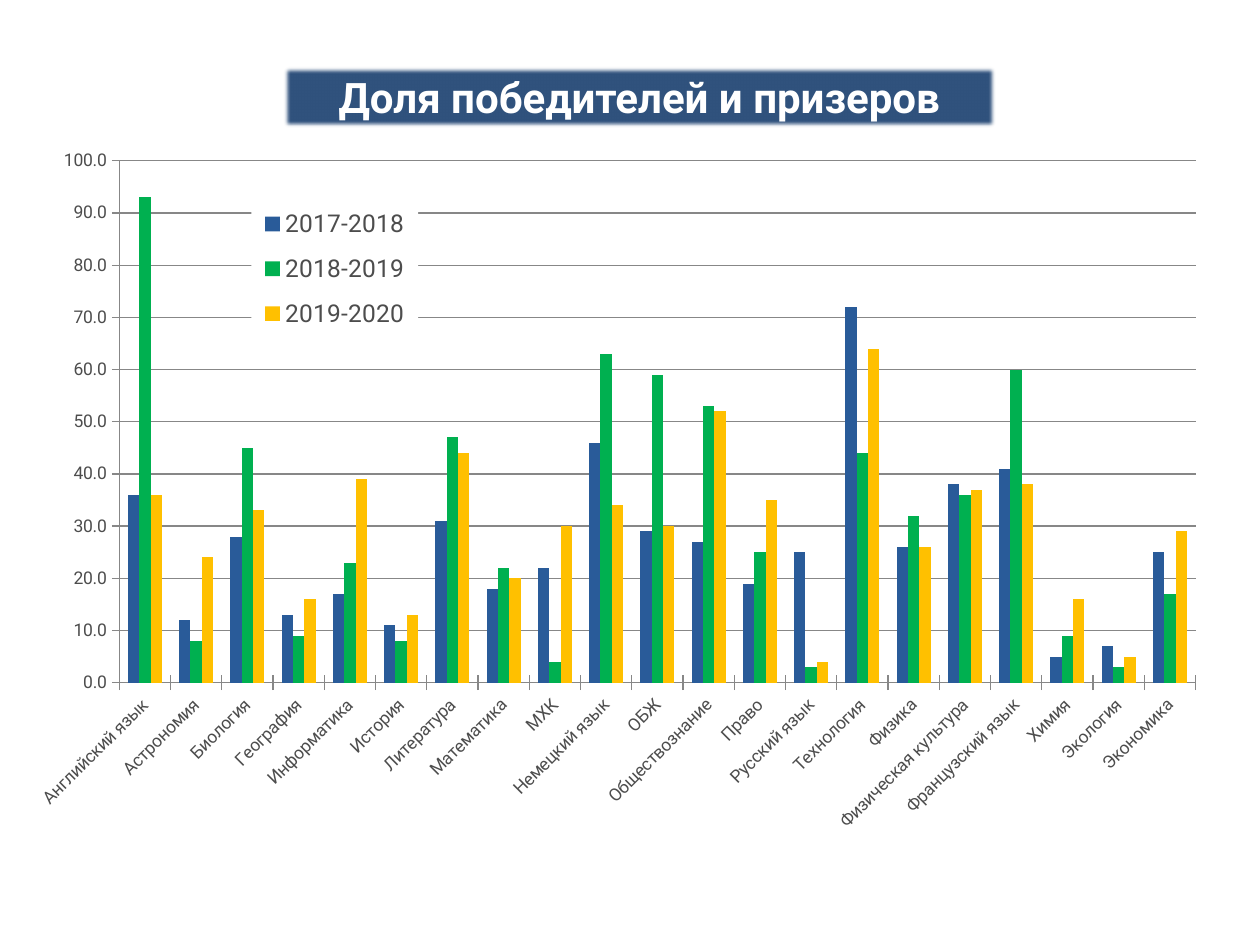
from lxml import etree
from pptx import Presentation
from pptx.chart.data import CategoryChartData
from pptx.dml.color import RGBColor
from pptx.enum.chart import XL_CHART_TYPE, XL_LEGEND_POSITION, XL_TICK_MARK
from pptx.enum.shapes import MSO_SHAPE
from pptx.enum.text import MSO_ANCHOR, PP_ALIGN
from pptx.oxml import parse_xml
from pptx.oxml.ns import nsdecls, qn
from pptx.util import Inches, Pt


def color(hex_value):
    return RGBColor.from_string(hex_value)


def manual_layout(parent, index, box, inner=False):
    """Give a chart part a fixed place, in fractions of the chart."""
    for old in parent.findall(qn("c:layout")):
        parent.remove(old)
    settings = {"layoutTarget": "inner"} if inner else {}
    settings |= {"xMode": "edge", "yMode": "edge"} | dict(zip("xywh", box))
    layout = etree.Element(qn("c:layout"))
    manual = etree.SubElement(layout, qn("c:manualLayout"))
    for tag, value in settings.items():
        etree.SubElement(manual, qn(f"c:{tag}")).set("val", str(value))
    parent.insert(index, layout)


deck = Presentation()
deck.slide_width, deck.slide_height = Inches(10), Inches(7.5)
slide = deck.slides.add_slide(deck.slide_layouts[6])

# Shares by school subject: 2017-2018, 2018-2019, 2019-2020
years = {"2017-2018": "295B99", "2018-2019": "00B050", "2019-2020": "FFC000"}
shares = {
    "Английский язык": (36, 93, 36),
    "Астрономия": (12, 8, 24),
    "Биология": (28, 45, 33),
    "География": (13, 9, 16),
    "Информатика": (17, 23, 39),
    "История": (11, 8, 13),
    "Литература": (31, 47, 44),
    "Математика": (18, 22, 20),
    "МХК": (22, 4, 30),
    "Немецкий язык": (46, 63, 34),
    "ОБЖ": (29, 59, 30),
    "Обществознание": (27, 53, 52),
    "Право": (19, 25, 35),
    "Русский язык": (25, 3, 4),
    "Технология": (72, 44, 64),
    "Физика": (26, 32, 26),
    "Физическая культура": (38, 36, 37),
    "Французский язык": (41, 60, 38),
    "Химия": (5, 9, 16),
    "Экология": (7, 3, 5),
    "Экономика": (25, 17, 29),
}
chart_data = CategoryChartData(number_format="0.0")
chart_data.categories = list(shares)
for year, values in zip(years, zip(*shares.values())):
    chart_data.add_series(year, values)

# Column chart
chart = slide.shapes.add_chart(
    XL_CHART_TYPE.COLUMN_CLUSTERED,
    Inches(0.2), Inches(1.07), Inches(9.45), Inches(5.91), chart_data).chart
chart.has_title = False
chart.font.name = "Roboto"
chart.font.size = Pt(10)
chart.font.color.rgb = color("4D4D4D")
manual_layout(chart.plots[0]._element.getparent(), 0,
              (0.079, 0.035, 0.904, 0.701), inner=True)

columns = chart.plots[0]
columns.vary_by_categories = False
columns.gap_width, columns.overlap = 150, 0
for series, fill in zip(columns.series, years.values()):
    series.format.fill.solid()
    series.format.fill.fore_color.rgb = color(fill)

# Axes and gridlines
subjects, percent = chart.category_axis, chart.value_axis
for axis in (subjects, percent):
    axis.major_tick_mark = XL_TICK_MARK.CROSS
    axis.tick_labels.font.size = Pt(10)
subjects.tick_labels.font._element.getparent().getparent().getparent().find(
    qn("a:bodyPr")).set("rot", "-2700000")
percent_scale = {"minimum_scale": 0, "maximum_scale": 100, "major_unit": 10,
                 "has_major_gridlines": True}
for name, value in percent_scale.items():
    setattr(percent, name, value)
percent.tick_labels.number_format = "0.0"
percent.tick_labels.number_format_is_linked = False
for part in (subjects, percent, percent.major_gridlines):
    part.format.line.color.rgb = color("878787")
    part.format.line.width = Pt(0.75)

# Legend on a white field over the gridlines
chart.has_legend = True
legend = chart.legend
legend.position = XL_LEGEND_POSITION.RIGHT
legend.include_in_layout = True
legend.font.size = Pt(14)
legend.font.color.rgb = color("4D4D4D")
manual_layout(legend._element, 1, (0.19, 0.08, 0.14, 0.2))
legend._element.find(qn("c:txPr")).addprevious(parse_xml(
    f'<c:spPr {nsdecls("c", "a")}><a:solidFill><a:srgbClr val="FFFFFF"/>'
    '</a:solidFill><a:ln><a:noFill/></a:ln></c:spPr>'))

# Title band with soft edges
title = slide.shapes.add_shape(MSO_SHAPE.RECTANGLE, Inches(2.24), Inches(0.52),
                               Inches(5.67), Inches(0.5))
title.fill.solid()
title.fill.fore_color.rgb = color("30527D")
title.line.fill.background()
title.shadow.inherit = False
effects = title._element.spPr.find(qn("a:effectLst"))
etree.SubElement(effects, qn("a:softEdge")).set("rad", "31750")
title.text_frame.word_wrap = True
title.text_frame.vertical_anchor = MSO_ANCHOR.MIDDLE
heading = title.text_frame.paragraphs[0]
heading.text = "Доля победителей и призеров"
heading.alignment = PP_ALIGN.CENTER
heading_font = heading.runs[0].font
for name, value in {"name": "Roboto", "size": Pt(24), "bold": True}.items():
    setattr(heading_font, name, value)
heading_font.color.rgb = color("FFFFFF")

deck.save("out.pptx")
